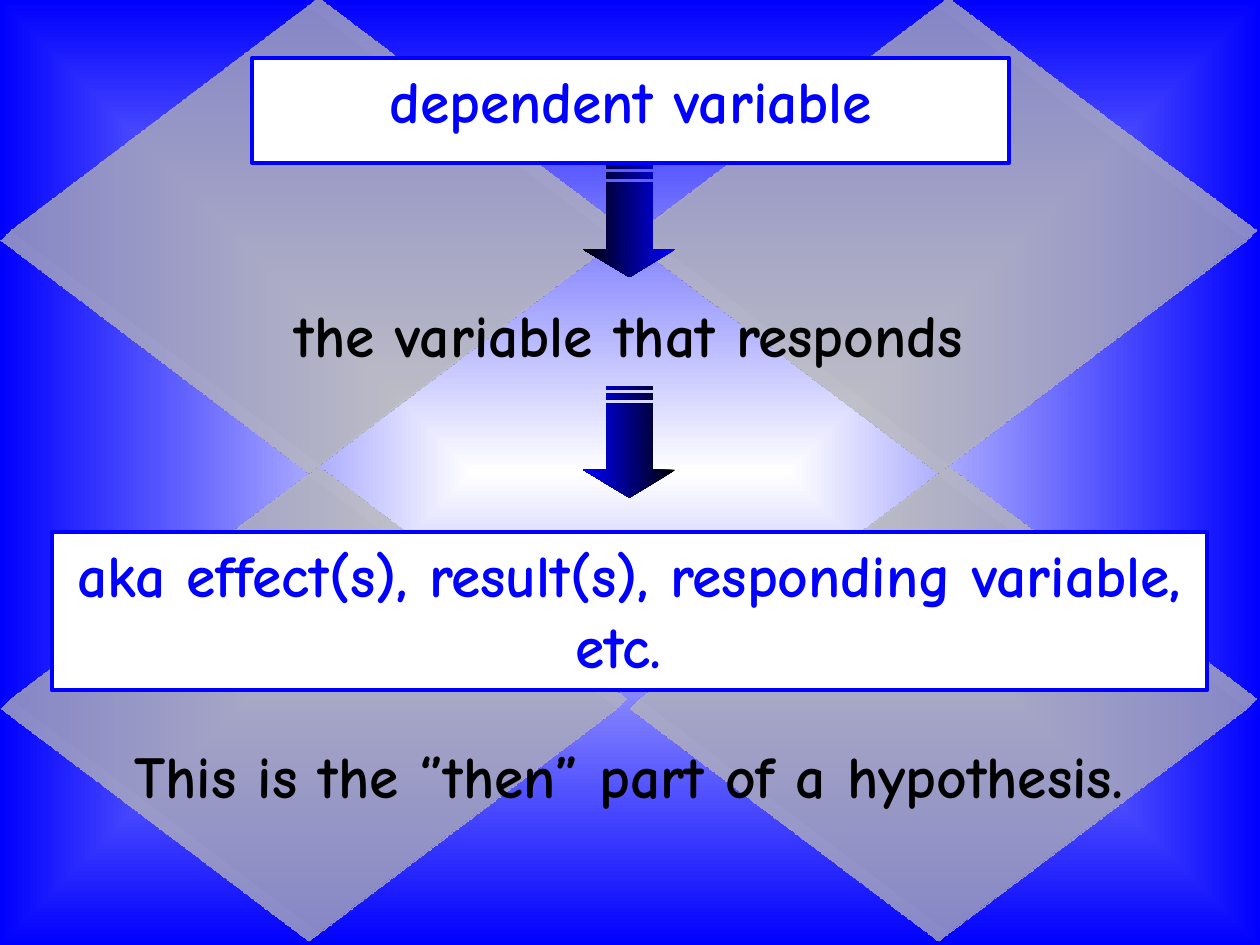
from lxml import etree
from pptx import Presentation, util as u
from pptx.dml.color import RGBColor
from pptx.enum import shapes, text

WIDTH, HEIGHT = 10, 7.5
BLUE, WHITE, BLACK = "0000FF", "FFFFFF", "000000"
FONT, SIZE = "Comic Neue", 34
DRAWING = "http://schemas.openxmlformats.org/drawingml/2006/main"
PRESENTATION = "http://schemas.openxmlformats.org/presentationml/2006/main"

BACKGROUND = f"""<p:bg xmlns:p="{PRESENTATION}" xmlns:a="{DRAWING}"><p:bgPr>
<a:gradFill rotWithShape="0"><a:gsLst>
<a:gs pos="0"><a:srgbClr val="{WHITE}"/></a:gs>
<a:gs pos="100000"><a:srgbClr val="{BLUE}"/></a:gs></a:gsLst>
<a:path path="shape"><a:fillToRect l="50000" t="50000" r="50000" b="50000"/></a:path>
</a:gradFill><a:effectLst/></p:bgPr></p:bg>"""

DEPTH = f"""<a:depth xmlns:a="{DRAWING}">
<a:scene3d><a:camera prst="legacyObliqueTopRight"/>
<a:lightRig rig="legacyFlat3" dir="b"/></a:scene3d>
<a:sp3d extrusionH="201600" prstMaterial="legacyMatte">
<a:bevelT w="13500" h="13500" prst="angle"/><a:bevelB w="13500" h="13500" prst="angle"/>
<a:extrusionClr><a:srgbClr val="{WHITE}"/></a:extrusionClr></a:sp3d></a:depth>"""


def colour(value):
    return RGBColor.from_string(value)


def inches(box):
    return [u.Inches(length) for length in box]


def paint_background(slide):
    slide.element.cSld.insert(0, etree.fromstring(BACKGROUND))


def add_diamonds(slide, box):
    """Four translucent diamonds, two by two, in the given box."""
    left, top, width, height = box
    wide, high = 0.49 * width, 3.7
    for row in (1, 0):
        for column in (0, 1):
            place = (left + column * width / 2, top + row * height / 2, wide, high)
            diamond = slide.shapes.add_shape(shapes.MSO_SHAPE.HEXAGON, *inches(place))
            diamond.adjustments[0] = wide / high / 2
            diamond.adjustments[1] = 1.155
            diamond.fill.solid()
            diamond.fill.fore_color.rgb = colour(WHITE)
            diamond.line.fill.background()
            diamond.shadow.inherit = False
            properties = diamond.element.spPr
            tint = properties.find(f".//{{{DRAWING}}}srgbClr")
            etree.SubElement(tint, f"{{{DRAWING}}}alpha", val="50000")
            for part in list(etree.fromstring(DEPTH)):
                properties.append(part)


def write(holder, words, ink):
    frame = holder.text_frame
    frame.text = words
    frame.word_wrap = True
    frame.auto_size = text.MSO_AUTO_SIZE.SHAPE_TO_FIT_TEXT
    line = frame.paragraphs[0]
    line.alignment = text.PP_ALIGN.CENTER
    font = line.runs[0].font
    font.name, font.size, font.bold = FONT, u.Pt(SIZE), True
    font.color.rgb = colour(ink)


def frame_white(panel):
    panel.fill.solid()
    panel.fill.fore_color.rgb = colour(WHITE)
    panel.line.color.rgb = colour(BLUE)
    panel.line.width = u.Pt(2.25)


def place_term(slide, box, words):
    """The title, brought in front of the diamonds."""
    term = slide.shapes.title
    term.left, term.top, term.width, term.height = inches(box)
    frame_white(term)
    write(term, words, BLUE)
    term.text_frame.vertical_anchor = text.MSO_ANCHOR.TOP
    term.text_frame.paragraphs[0].space_before = u.Pt(0)
    term.element.getparent().append(term.element)


def add_statement(slide, box, words):
    write(slide.shapes.add_textbox(*inches(box)), words, BLACK)


def add_synonyms(slide, box, words):
    panel = slide.shapes.add_shape(shapes.MSO_SHAPE.RECTANGLE, *inches(box))
    panel.shadow.inherit = False
    frame_white(panel)
    write(panel, words, BLUE)
    panel.text_frame.vertical_anchor = text.MSO_ANCHOR.TOP


def add_striped_arrow(slide, box, stops):
    """A right-pointing arrow with two tail stripes, turned to point down."""
    left, top, length, breadth = box
    middle, stem = top + breadth / 2, 0.25 * breadth

    def points(pairs):
        return [tuple(inches((left + x, middle + y))) for x, y in pairs]

    def bar(start, end):
        return [(start, -stem), (end, -stem), (end, stem), (start, stem)]

    neck, half = 0.67, breadth / 2
    body = [(0.14, -stem), (neck, -stem), (neck, -half), (length, 0),
            (neck, half), (neck, stem), (0.14, stem)]
    first, *rest = points(body)
    builder = slide.shapes.build_freeform(*first, scale=1.0)
    builder.add_line_segments(rest, close=True)
    for stripe in (bar(0.06, 0.11), bar(0, 0.03)):
        first, *rest = points(stripe)
        builder.move_to(*first)
        builder.add_line_segments(rest, close=True)
    arrow = builder.convert_to_shape()
    arrow.rotation = 90
    arrow.shadow.inherit = False
    arrow.line.fill.background()
    arrow.fill.gradient()
    arrow.fill.gradient_angle = 270
    for stop, position, shade in zip(arrow.fill.gradient_stops, (0, 1), stops):
        stop.position = position
        stop.color.rgb = colour(shade)


def main():
    deck = Presentation()
    deck.slide_width, deck.slide_height = inches((WIDTH, HEIGHT))
    slide = deck.slides.add_slide(deck.slide_layouts[5])

    # Backdrop
    paint_background(slide)
    add_diamonds(slide, (0, 0.06, WIDTH, 0.99 * HEIGHT))

    # Term, meaning and other names, from top to bottom
    place_term(slide, (2, 0.46, 6.01, 0.7), "dependent variable")
    add_statement(slide, (0.88, 2.32, 8.22, 0.67), "the variable that responds")
    for top, stops in ((1.39, (BLUE, BLACK)), (3.14, (BLACK, BLUE))):
        add_striped_arrow(slide, (4.55, top, 0.89, 0.73), stops)
    add_synonyms(slide, (0.41, 4.22, 9.17, 1.26),
                 "aka effect(s), result(s), responding variable, etc. ")
    add_statement(slide, (0.32, 5.82, 9.34, 1.23),
                  "This is the ‘’then” part of a hypothesis.")

    deck.save("out.pptx")


if __name__ == "__main__":
    main()
